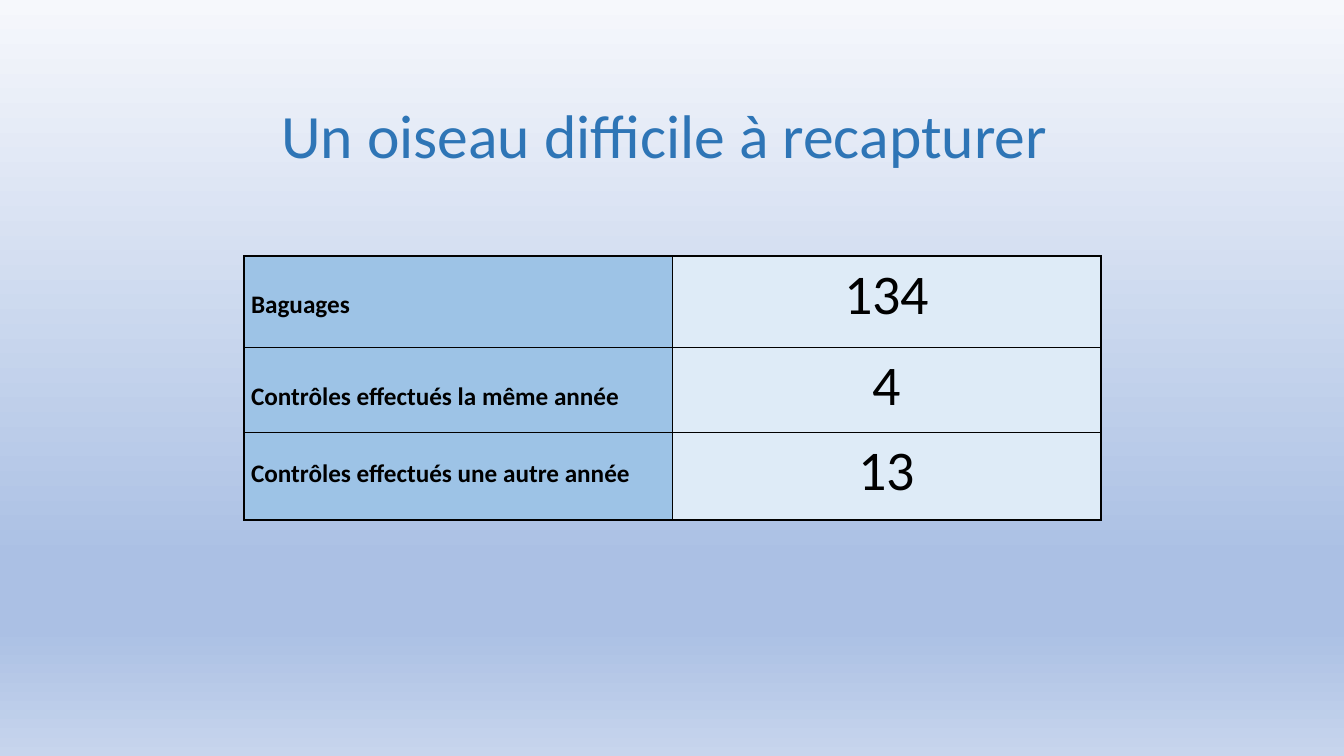
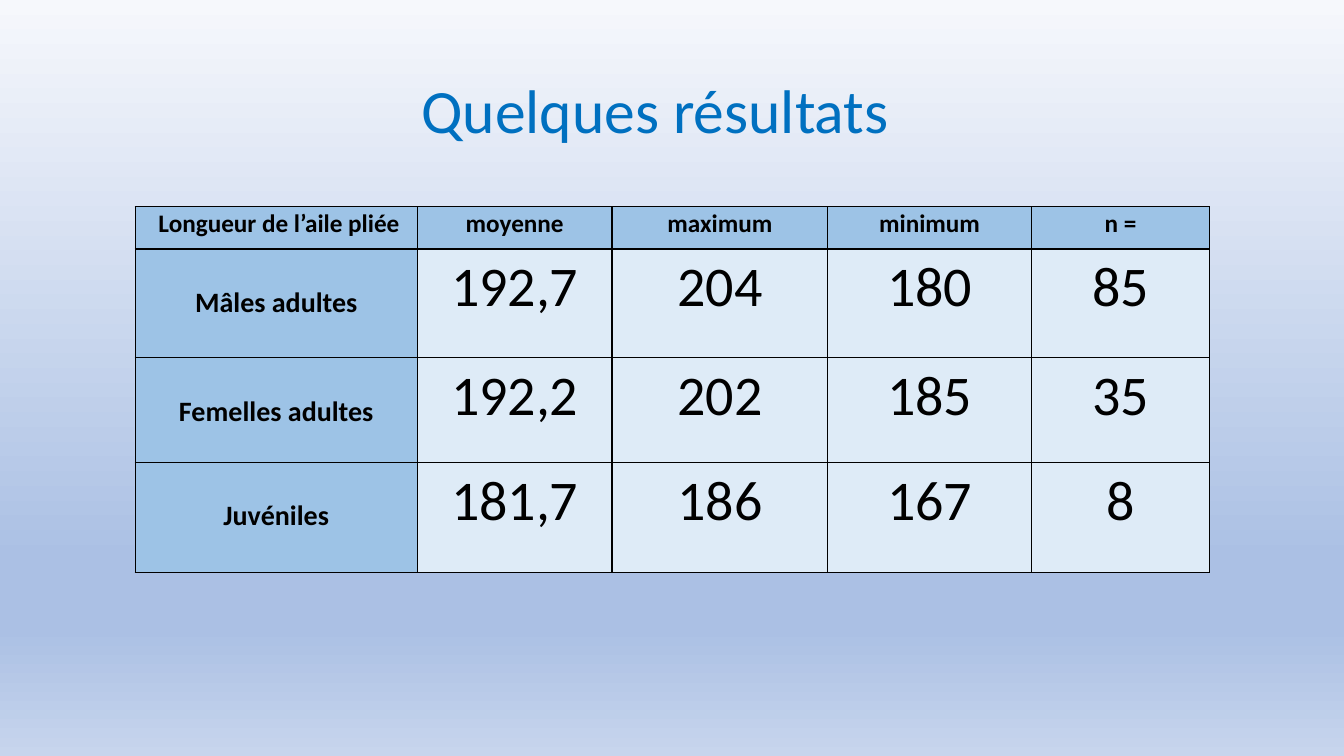
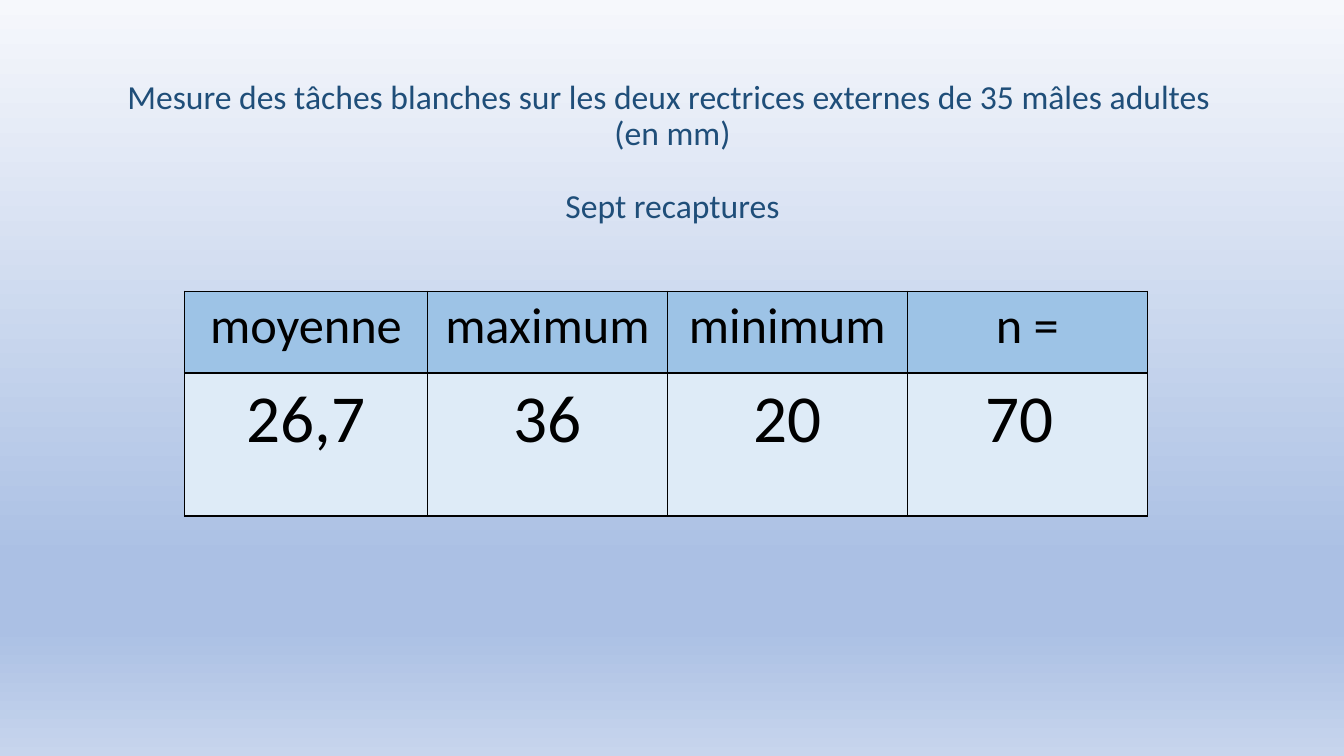
import pptx
import pptx.dml.color
import pptx.enum.text
import pptx.oxml
import pptx.oxml.ns
import pptx.util

PX = 9144
FONT = "Calibri"
COLORS = {
    "text": "000000", "border": "000000", "head": "9DC3E6", "value": "DEEBF7",
    "blue": "2E75B6", "bright": "0070C0", "navy": "1F4E79",
}
BACKGROUND = [(0, "F6F8FC"), (74, "ABC0E4"), (83, "ABC0E4"), (100, "C7D5ED")]
ALIGN = pptx.enum.text.PP_ALIGN
STYLES = {
    "label": dict(fill="head", size=18, bold=True, align=ALIGN.LEFT, top=31),
    "label_high": dict(fill="head", size=18, bold=True, align=ALIGN.LEFT, top=24),
    "group": dict(fill="head", size=20, bold=True, top=34),
    "head": dict(fill="head", size=18, bold=True),
    "head_large": dict(fill="head", size=36),
    "value": dict(fill="value", size=40),
    "value_large": dict(fill="value", size=48),
}


def px(n):
    """Turn px into EMU."""
    return pptx.util.Emu(n * PX)


def rgb(name):
    """Look up a named colour."""
    return pptx.dml.color.RGBColor.from_string(COLORS[name])


def write(p, text, size, color="text", bold=False, align=ALIGN.CENTER, spacing=1.07, before=0):
    """Put formatted text into a paragraph."""
    p.alignment, p.line_spacing = align, spacing
    p.space_before = pptx.util.Pt(before)
    for i, line in enumerate(text.split("\n")):
        if i:
            p.add_line_break()
        r = p.add_run()
        r.text = line
        r.font.name, r.font.size, r.font.bold = FONT, pptx.util.Pt(size), bold
        r.font.color.rgb = rgb(color)


def set_background(master):
    """Give all slides the vertical gradient."""
    fill = master.background.fill
    fill.gradient()
    fill.gradient_angle = 270
    stops = master.element.find(".//" + pptx.oxml.ns.qn("a:gsLst"))
    for old in list(stops):
        stops.remove(old)
    for pos, color in BACKGROUND:
        stops.append(pptx.oxml.parse_xml(
            f'<a:gs {pptx.oxml.ns.nsdecls("a")} pos="{pos * 1000}">'
            f'<a:srgbClr val="{color}"/></a:gs>'))


def add_titled_slide(prs, height, paragraphs, size, color, align=ALIGN.LEFT, left=10):
    """Add a slide whose title has the given height and left inset."""
    s = prs.slides.add_slide(prs.slide_layouts[5])
    sp = s.shapes.title
    sp.left, sp.top, sp.width, sp.height = px(92), px(40), px(1150), px(height)
    tf = sp.text_frame
    tf.word_wrap = True
    tf.auto_size = pptx.enum.text.MSO_AUTO_SIZE.NONE
    tf.vertical_anchor = pptx.enum.text.MSO_ANCHOR.MIDDLE
    tf.margin_left, tf.margin_right = px(left), px(10)
    tf.margin_top = tf.margin_bottom = px(5)
    for i, text in enumerate(paragraphs):
        p = tf.add_paragraph() if i else tf.paragraphs[0]
        write(p, text, size, color, align=align, spacing=0.9, before=26 if i else 0)
    return s


def format_cell(cell, text, fill, top=0, **font):
    """Fill, border and write one table cell."""
    cell.margin_left = cell.margin_right = px(7)
    cell.margin_top, cell.margin_bottom = px(top), 0
    cell.vertical_anchor = pptx.enum.text.MSO_ANCHOR.TOP
    tc_pr = cell._tc.get_or_add_tcPr()
    for side in "LRTB":
        tc_pr.append(pptx.oxml.parse_xml(
            f'<a:ln{side} {pptx.oxml.ns.nsdecls("a")} w="12700"><a:solidFill>'
            f'<a:srgbClr val="{COLORS["border"]}"/></a:solidFill></a:ln{side}>'))
    cell.fill.solid()
    cell.fill.fore_color.rgb = rgb(fill)
    write(cell.text_frame.paragraphs[0], text, **font)


def add_grid(s, x, y, cols, rows):
    """Add a table; each row gives height, first style, other style and texts."""
    height = sum(row[0] for row in rows)
    table = s.shapes.add_table(
        len(rows), len(cols), px(x), px(y), px(sum(cols)), px(height)).table
    table.first_row = table.horz_banding = False
    for col, width in zip(table.columns, cols):
        col.width = px(width)
    for i, (row_height, first, other, texts) in enumerate(rows):
        table.rows[i].height = px(row_height)
        for j, text in enumerate(texts):
            format_cell(table.cell(i, j), text, **STYLES[other if j else first])


def add_recaptures(prs):
    """Slide with ringing and recapture counts."""
    s = add_titled_slide(prs, 195, ["Un oiseau difficile à recapturer"], 44, "blue", left=187)
    add_grid(s, 242, 254, [425, 425], [
        (91, "label", "value", ["Baguages", "134"]),
        (84, "label", "value", ["Contrôles effectués la même année", "4"]),
        (87, "label_high", "value", ["Contrôles effectués une autre année", "13"]),
    ])


def add_wing_lengths(prs):
    """Slide with wing lengths by group."""
    s = add_titled_slide(prs, 145, ["Quelques résultats"], 44, "bright", left=326)
    add_grid(s, 134, 205, [280, 193, 214, 202, 177], [
        (42, "head", "head",
         [" Longueur de l’aile pliée", "moyenne", "maximum", "minimum", "n ="]),
        (108, "group", "value", ["Mâles adultes", "192,7", "204", "180", "85"]),
        (104, "group", "value", ["Femelles adultes", "192,2", "202", "185", "35"]),
        (109, "group", "value", ["Juvéniles", "181,7", "186", "167", "8"]),
    ])


def add_white_spots(prs):
    """Slide with white spot measurements."""
    s = add_titled_slide(prs, 223, [
        "Mesure des tâches blanches sur les deux rectrices externes de 35 mâles adultes \n(en mm)",
        "Sept recaptures",
    ], 24, "navy", align=ALIGN.CENTER)
    add_grid(s, 183, 289, [241, 238, 238, 238], [
        (81, "head_large", "head_large", ["moyenne", "maximum", "minimum", "n ="]),
        (142, "value_large", "value_large", ["26,7", "36", "20", "70 "]),
    ])


def main():
    """Build and save the presentation."""
    prs = pptx.Presentation()
    prs.slide_width, prs.slide_height = px(1333), px(750)
    set_background(prs.slide_master)
    add_recaptures(prs)
    add_wing_lengths(prs)
    add_white_spots(prs)
    prs.save("out.pptx")


if __name__ == "__main__":
    main()
